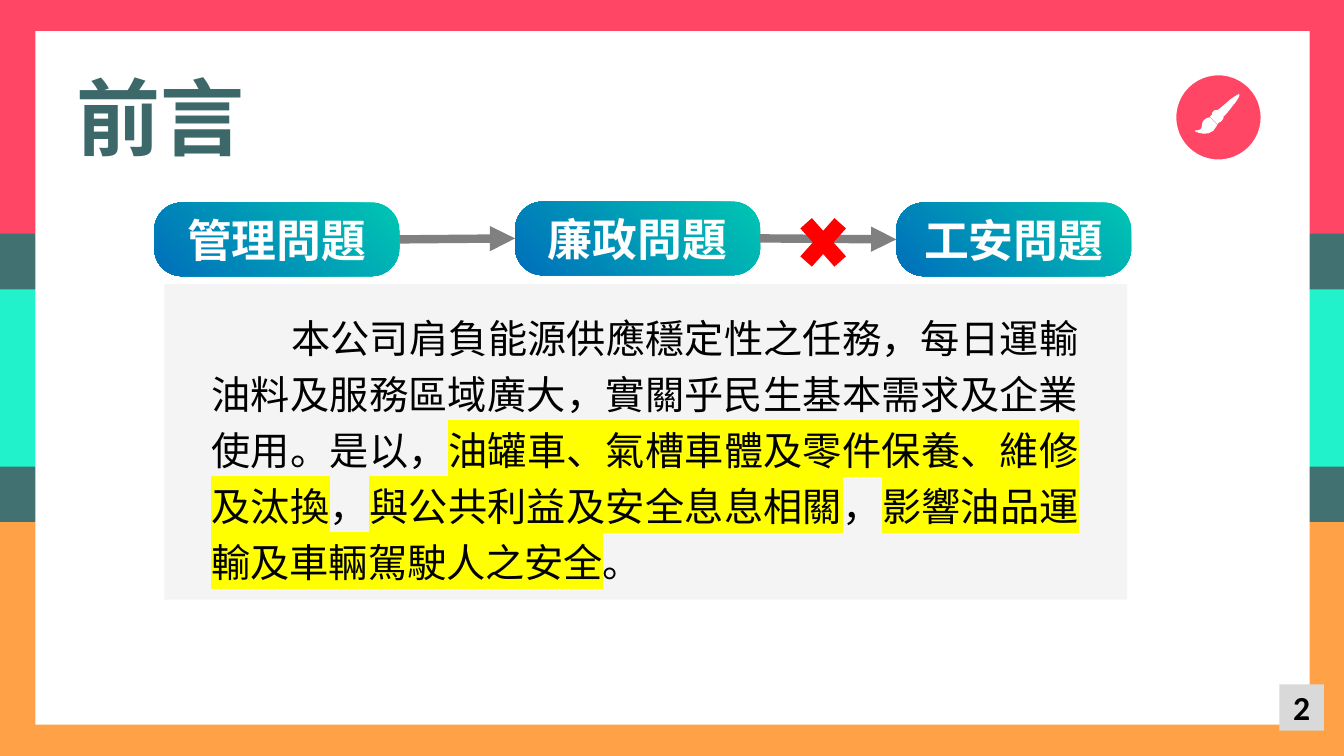
"""Build the foreword slide: three linked issues above a highlighted note."""
import pptx
import pptx.util
import pptx.dml.color
import pptx.enum.shapes
import pptx.enum.text
import pptx.oxml.ns
from lxml import etree

KIND = pptx.enum.shapes.MSO_SHAPE
ALIGN = pptx.enum.text.PP_ALIGN
MID = pptx.enum.text.MSO_ANCHOR.MIDDLE
Pt = pptx.util.Pt
qn = pptx.oxml.ns.qn

THEME = {
    "slate": "427172", "mint": "22F2CC", "rose": "FF4664", "gold": "FFA146",
    "white": "FFFFFF", "black": "000000", "title": "3D6869", "teal": "00C6B2",
    "blue": "006FBB", "gray": "808080", "red": "FF0000", "pale": "F2F2F2",
    "tag": "D9D9D9", "mark": "FFFF00",
    "han": "Noto Sans CJK SC", "latin": "Calibri",
    "big": 60, "mid": 32, "body": 28, "num": 24,
}

# Boxes hold left, top, width and height as percent of the slide.
BANDS = [
    ("slate", (0, 0, 100, 100)),
    ("mint", (0, 38.27, 100, 23.47)),
    ("rose", (0, 0, 100, 30.93)),
    ("gold", (0, 69.07, 100, 30.93)),
    ("white", (2.63, 4.13, 94.82, 91.73)),
]
TITLE = ("前言", (4.95, 8, 14.55, 14.8))
BADGE = (87.47, 9.87, 6.38, 11.33)
ISSUES = [
    ("管理問題", (11.48, 26.8, 18.23, 9.73)),
    ("廉政問題", (38.33, 26.67, 18.23, 9.73)),
    ("工安問題", (66.69, 26.8, 17.48, 9.73)),
]
CROSS = (58.81, 27.2, 4.88, 9.73)
PANEL = (12.23, 37.6, 71.64, 41.73)
NOTE = (15, 39.73, 66.02, 38.13)
PAGE = ("2", (95.2, 90.53, 3.3, 6.13))
WORDS = [
    ("本公司肩負能源供應穩定性之任務，每日運輸油料及服務區域廣大，實關乎民生基本需求及企業使用。是以，", False),
    ("油罐車、氣槽車體及零件保養、維修及汰換", True),
    ("，", False),
    ("與公共利益及安全息息相關", True),
    ("，", False),
    ("影響油品運輸及車輛駕駛人之安全", True),
    ("。", False),
]
BRUSH_AT = (88.95, 12.53)
BRUSH = [
    ((43, 0), [
        (43, 0, 42, 0, 35, 5), (35, 5, 27, 12, 22, 16),
        (19, 15, 18, 17, 18, 17), (16, 19, 17, 20, 17, 20),
        (16, 21, 15, 22, 15, 22), (22, 29, 22, 29, 22, 29),
        (22, 29, 22, 28, 23, 27), (25, 27, 26, 25, 26, 25),
        (26, 25, 28, 23, 27, 22), (32, 17, 37, 10, 37, 10),
        (40, 7, 44, 0, 43, 0)]),
    ((7, 30), [
        (7, 37, 0, 36, 0, 36), (0, 36, 15, 44, 21, 30),
        (14, 23, 14, 23, 14, 23), (14, 23, 7, 24, 7, 30)]),
]

deck = pptx.Presentation()
deck.slide_width = pptx.util.Inches(13.333)
deck.slide_height = pptx.util.Inches(7.5)
slide = deck.slides.add_slide(deck.slide_layouts[6])
shapes = slide.shapes


def put(obj, vals):
    for key, val in vals.items():
        setattr(obj, key, val)


def rgb(name):
    return pptx.dml.color.RGBColor.from_string(THEME[name])


def scale(box):
    full = (deck.slide_width, deck.slide_height) * 2
    return [round(part * size / 100) for part, size in zip(box, full)]


def paint(shape, fill, line=None, width=1):
    shape.shadow.inherit = False
    shape.fill.solid()
    shape.fill.fore_color.rgb = rgb(fill)
    if line:
        shape.line.color.rgb = rgb(line)
        shape.line.width = Pt(width)
    else:
        shape.line.fill.background()


def block(kind, box, fill, line=None):
    shape = shapes.add_shape(kind, *scale(box))
    paint(shape, fill, line)
    return shape


def write(shape, runs, size, color, font="han", bold=False, align=ALIGN.LEFT, **frame):
    put(shape.text_frame, {"word_wrap": True, **frame})
    para = shape.text_frame.paragraphs[0]
    para.alignment = align
    for text, mark in runs:
        run = para.add_run()
        run.text = text
        put(run.font, {"size": Pt(THEME[size]), "bold": bold, "name": THEME[font]})
        run.font.color.rgb = rgb(color)
        props = run.font._element
        etree.SubElement(props, qn("a:ea"), typeface=THEME[font])
        if mark:
            glow = etree.Element(qn("a:highlight"))
            etree.SubElement(glow, qn("a:srgbClr"), val=THEME["mark"])
            props.find(qn("a:solidFill")).addnext(glow)
    return para


def curve(start, bends, steps=6):
    dots, last = [], start
    for bend in bends:
        for step in range(1, steps + 1):
            t = step / steps
            u = 1 - t
            dots.append(tuple(
                10 * (u**3 * last[i] + 3 * u * u * t * bend[i]
                      + 3 * u * t * t * bend[i + 2] + t**3 * bend[i + 4])
                for i in (0, 1)))
        last = bend[4:]
    return dots


def draw_brush():
    pen = None
    for start, bends in BRUSH:
        x, y = start[0] * 10, start[1] * 10
        if pen:
            pen.move_to(x, y)
        else:
            pen = shapes.build_freeform(x, y, scale=914.4)
        pen.add_line_segments(curve(start, bends), close=True)
    paint(pen.convert_to_shape(*scale(BRUSH_AT)), "white", "white", 0.75)


def draw_pill(text, box):
    pill = block(KIND.ROUNDED_RECTANGLE, box, "teal")
    pill.adjustments[0] = 0.374
    pill.fill.gradient()
    pill.fill.gradient_angle = 225
    for stop, name in zip(pill.fill.gradient_stops, ("teal", "blue")):
        stop.color.rgb = rgb(name)
    write(pill, [(text, False)], "mid", "white", bold=True,
          align=ALIGN.CENTER, vertical_anchor=MID)
    return pill


def link(left, right):
    line = shapes.add_connector(pptx.enum.shapes.MSO_CONNECTOR.STRAIGHT, 0, 0, 0, 0)
    line.begin_connect(left, 3)
    line.end_connect(right, 1)
    line.line.color.rgb = rgb("gray")
    line.line.width = Pt(6)
    etree.SubElement(line.line._get_or_add_ln(), qn("a:tailEnd"), type="triangle")
    etree.SubElement(line._element.spPr, qn("a:effectLst"))


def main():
    for fill, box in BANDS:
        block(KIND.RECTANGLE, box, fill)
    text, box = TITLE
    write(shapes.add_textbox(*scale(box)), [(text, False)], "big", "title", bold=True)
    block(KIND.OVAL, BADGE, "rose", "white")
    draw_brush()

    pills = [draw_pill(*issue) for issue in ISSUES]
    for left, right in zip(pills, pills[1:]):
        link(left, right)
    block(KIND.MATH_MULTIPLY, CROSS, "red")

    panel = block(KIND.RECTANGLE, PANEL, "pale")
    tint = panel._element.spPr.find(qn("a:solidFill"))[0]
    etree.SubElement(tint, qn("a:alpha"), val="80000")
    para = write(shapes.add_textbox(*scale(NOTE)), WORDS, "body", "black",
                 align=ALIGN.JUSTIFY)
    put(para, {"line_spacing": Pt(40), "space_before": Pt(12)})
    para._p.get_or_add_pPr().set("indent", str(pptx.util.Inches(0.79)))

    text, box = PAGE
    write(block(KIND.RECTANGLE, box, "tag"), [(text, False)], "num", "black",
          font="latin", bold=True, align=ALIGN.CENTER, vertical_anchor=MID)
    deck.save("out.pptx")


if __name__ == "__main__":
    main()
